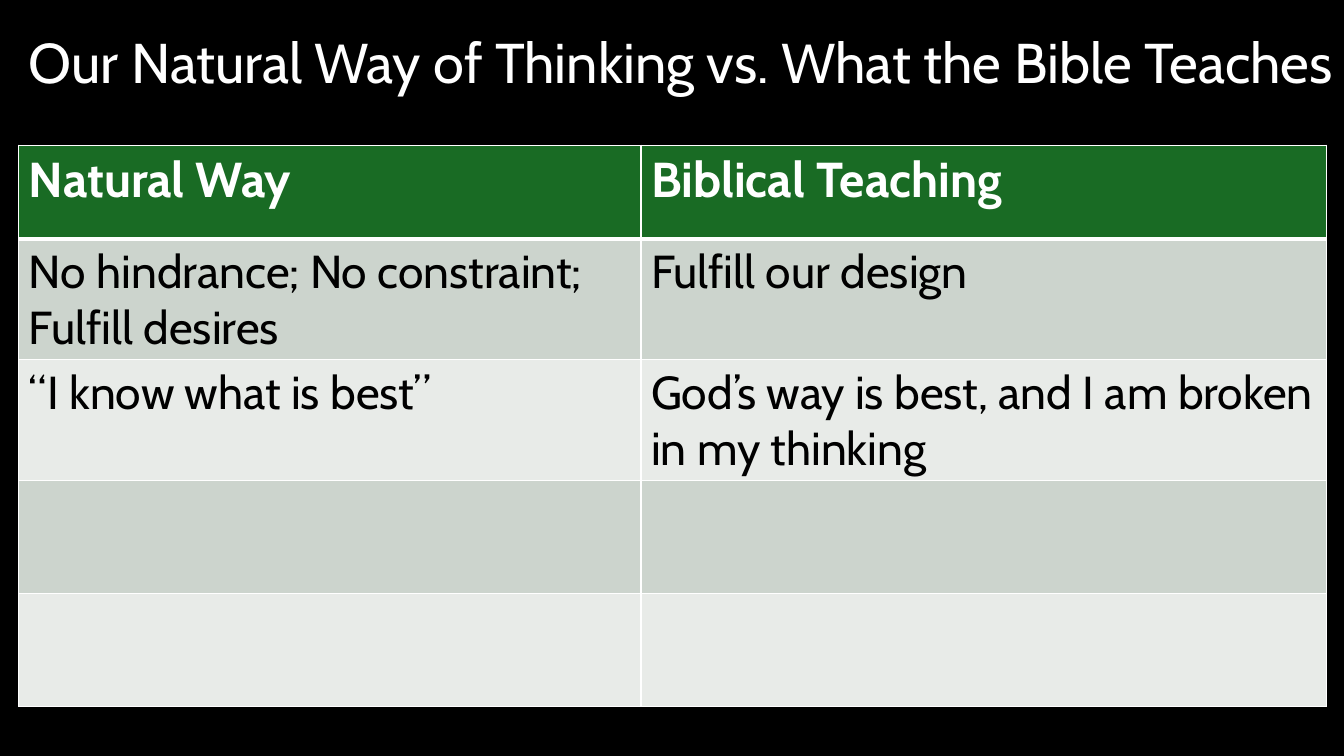
from dataclasses import dataclass
from pptx import Presentation, util as u
from pptx.dml import color
from pptx.enum import text
from pptx.oxml import parse_xml
from pptx.oxml.ns import nsdecls

WIDE, HIGH = 13.33, 7.5
HUES = {"black": "000000", "white": "FFFFFF", "green": "196B24",
        "sage": "CCD4CD", "mist": "E8EBE8"}


@dataclass
class Row:
    fill: str
    ink: str
    size: int
    bold: bool
    high: float  # share of slide height
    words: tuple[str, str] = ("", "")


ROWS = [
    Row("green", "white", 35, True, 0.124, ("Natural Way", "Biblical Teaching")),
    Row("sage", "black", 33, False, 0.149,
        ("No hindrance; No constraint; Fulfill desires", "Fulfill our design")),
    Row("mist", "black", 33, False, 0.149,
        ("“I know what is best”", "God’s way is best, and I am broken in my thinking")),
    Row("sage", "black", 33, False, 0.149),
    Row("mist", "black", 33, False, 0.149),
]
COLS = (0.463, 0.51)  # shares of slide width
LEFT = 0.014


def across(share: float) -> int:
    return u.Inches(WIDE * share)


def down(share: float) -> int:
    return u.Inches(HIGH * share)


def rgb(name: str) -> color.RGBColor:
    return color.RGBColor.from_string(HUES[name])


def write(frame, words: str, size: int, ink: str, bold: bool = False) -> None:
    run = frame.paragraphs[0].add_run()
    run.text = words
    look = {"name": "Cabin", "size": u.Pt(size), "bold": bold}
    for key, value in look.items():
        setattr(run.font, key, value)
    run.font.color.rgb = rgb(ink)


def edge(cell, side: str, width: float) -> None:
    cell._tc.get_or_add_tcPr().append(parse_xml(
        f'<a:ln{side} {nsdecls("a")} w="{u.Pt(width)}"><a:solidFill>'
        f'<a:srgbClr val="{HUES["white"]}"/></a:solidFill></a:ln{side}>'))


def title(slide, words: str) -> None:
    box = slide.shapes.add_textbox(across(LEFT), down(0.023), across(0.987), down(0.128))
    frame = box.text_frame
    look = {"word_wrap": True, "vertical_anchor": text.MSO_ANCHOR.MIDDLE}
    for key, value in look.items():
        setattr(frame, key, value)
    frame.paragraphs[0].line_spacing = 0.9
    write(frame, words, 40, "white")


def table(slide, rows: list[Row]) -> None:
    grid = slide.shapes.add_table(
        len(rows), len(COLS), across(LEFT), down(0.192), across(sum(COLS)),
        down(sum(row.high for row in rows))).table
    for col, share in zip(grid.columns, COLS):
        col.width = across(share)
    for i, row in enumerate(rows):
        grid.rows[i].height = down(row.high)
        for j, words in enumerate(row.words):
            cell = grid.cell(i, j)
            # Thick rule between the heading and the body
            thick = {"T": i == 1, "B": i == 0}
            for side in "LRTB":
                edge(cell, side, 3 if thick.get(side) else 1)
            cell.fill.solid()
            cell.fill.fore_color.rgb = rgb(row.fill)
            if words:
                write(cell.text_frame, words, row.size, row.ink, row.bold)


def main() -> None:
    deck = Presentation()
    deck.slide_width, deck.slide_height = across(1), down(1)
    slide = deck.slides.add_slide(deck.slide_layouts[6])
    # Black ground
    ground = slide.background.fill
    ground.solid()
    ground.fore_color.rgb = rgb("black")
    # Heading and comparison
    title(slide, "Our Natural Way of Thinking vs. What the Bible Teaches")
    table(slide, ROWS)
    deck.save("out.pptx")


if __name__ == "__main__":
    main()
